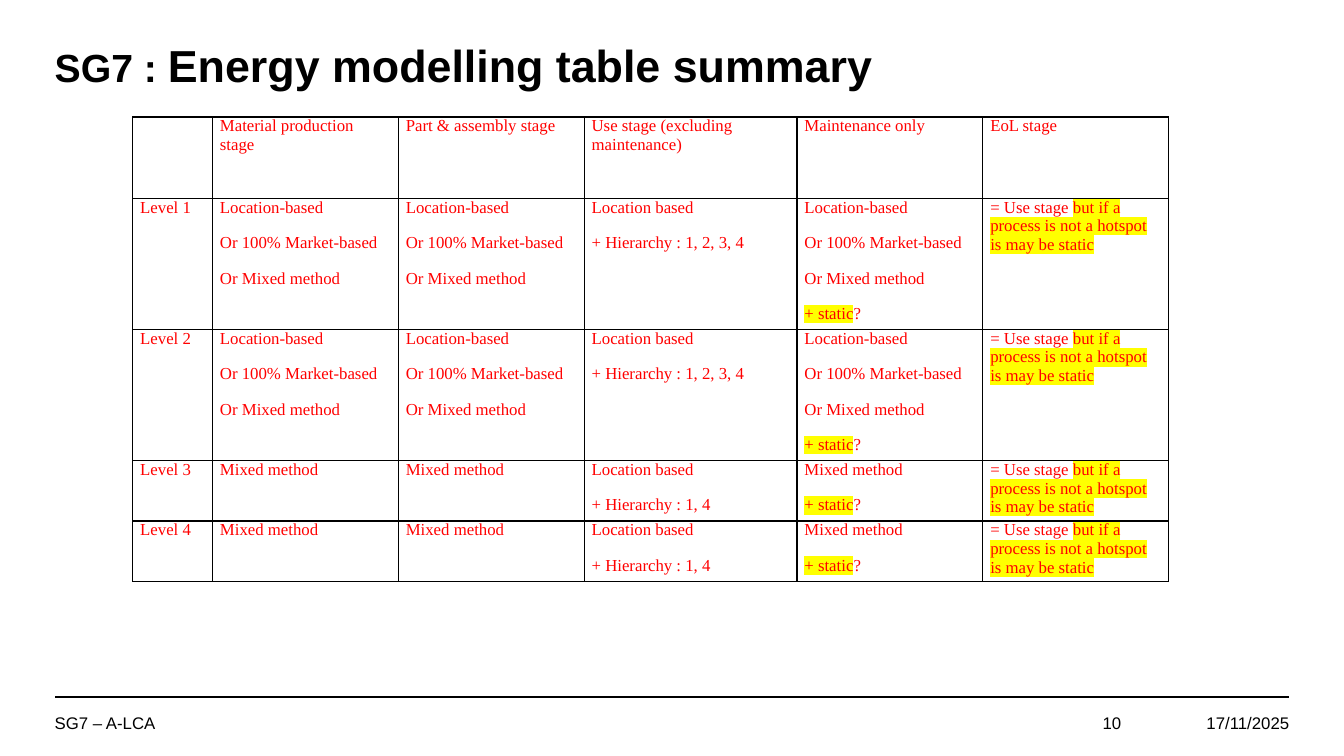
from lxml import etree
from pptx import Presentation
from pptx.dml.color import RGBColor
from pptx.enum.shapes import MSO_CONNECTOR
from pptx.enum.text import MSO_ANCHOR, PP_ALIGN
from pptx.oxml.ns import qn
from pptx.util import Pt

BLACK = RGBColor(0x00, 0x00, 0x00)
RED = RGBColor(0xFF, 0x00, 0x00)
YELLOW = RGBColor(0xFF, 0xFF, 0x00)
STRAIGHT = MSO_CONNECTOR.STRAIGHT
BOTTOM, MIDDLE = MSO_ANCHOR.BOTTOM, MSO_ANCHOR.MIDDLE
LEFT, RIGHT = PP_ALIGN.LEFT, PP_ALIGN.RIGHT


def write(paragraph, text, size=12, font="Arial", color=BLACK, bold=False, highlight=None):
    run = paragraph.add_run()
    run.text = text
    run.font.size = Pt(size)
    run.font.name = font
    run.font.bold = bold
    run.font.color.rgb = color
    if highlight is not None:
        marker = etree.Element(qn("a:highlight"))
        etree.SubElement(marker, qn("a:srgbClr"), val=str(highlight))
        run.font._element.find(qn("a:solidFill")).addnext(marker)


def add_box(left, top, width, height, anchor, align):
    frame = slide.shapes.add_textbox(Pt(left), Pt(top), Pt(width), Pt(height)).text_frame
    frame.word_wrap = True
    frame.vertical_anchor = anchor
    frame.paragraphs[0].alignment = align
    return frame.paragraphs[0]


prs = Presentation()
prs.slide_width, prs.slide_height = Pt(960), Pt(540)
slide = prs.slides.add_slide(prs.slide_layouts[6])

footer_rule = slide.shapes.add_connector(STRAIGHT, Pt(39.5), Pt(498), Pt(921), Pt(498))
footer_rule.line.color.rgb = BLACK
footer_rule.line.width = Pt(1.5)
etree.SubElement(footer_rule._element.spPr, qn("a:effectLst"))

title = add_box(32, 17.3, 866, 52, BOTTOM, LEFT)
title.line_spacing = 0.9
write(title, "SG7 : ", size=28, bold=True)
write(title, "Energy modelling table summary", size=32, bold=True)

for text, left, width, align in [
    ("17/11/2025", 838, 90, RIGHT),
    ("SG7 – A-LCA", 32, 348, LEFT),
    ("10", 752, 56, RIGHT),
]:
    write(add_box(left, 502, width, 29, MIDDLE, align), text)

methods = [[("Location-based", None)], [("Or 100% Market-based", None)], [("Or Mixed method", None)]]
mixed = [[("Mixed method", None)]]
static = [[("+ static", YELLOW), ("?", None)]]
end_of_life = [[("= Use stage ", None), ("but if a process is not a hotspot is may be static", YELLOW)]]

headers = ["Material production stage", "Part & assembly stage",
           "Use stage (excluding maintenance)", "Maintenance only", "EoL stage"]
rows = [[[]] + [[[(header, None)]] for header in headers]]
for level, production, hierarchy in [
    (1, methods, "1, 2, 3, 4"),
    (2, methods, "1, 2, 3, 4"),
    (3, mixed, "1, 4"),
    (4, mixed, "1, 4"),
]:
    use_stage = [[("Location based", None)], [(f"+ Hierarchy : {hierarchy}", None)]]
    rows.append([[[(f"Level {level}", None)]], production, production,
                 use_stage, production + static, end_of_life])

column_widths = [57, 132.75, 132.75, 152, 132.75, 132.75]
row_heights = [58, 89.3, 89.3, 40, 40]
table = slide.shapes.add_table(len(rows), len(column_widths), Pt(94.75), Pt(83.5),
                               Pt(sum(column_widths)), Pt(sum(row_heights))).table
table.first_row = False
table.horz_banding = False
for column, width in zip(table.columns, column_widths):
    column.width = Pt(width)
for row, height in zip(table.rows, row_heights):
    row.height = Pt(height)

for row, contents in zip(table.rows, rows):
    for cell, paragraphs in zip(row.cells, contents):
        cell.margin_left = cell.margin_right = Pt(5.4)
        cell.margin_top = cell.margin_bottom = Pt(0)
        properties = cell._tc.get_or_add_tcPr()
        for side in ("a:lnL", "a:lnR", "a:lnT", "a:lnB"):
            border = etree.SubElement(properties, qn(side), w=str(Pt(1)))
            border_fill = etree.SubElement(border, qn("a:solidFill"))
            etree.SubElement(border_fill, qn("a:srgbClr"), val=str(BLACK))
        cell.fill.background()
        frame = cell.text_frame
        for index, runs in enumerate(paragraphs):
            paragraph = frame.add_paragraph() if index else frame.paragraphs[0]
            paragraph.space_before = Pt(6 if index else 0)
            paragraph.space_after = Pt(6)
            for text, highlight in runs:
                write(paragraph, text, font="Times New Roman", color=RED, highlight=highlight)

prs.save("out.pptx")
